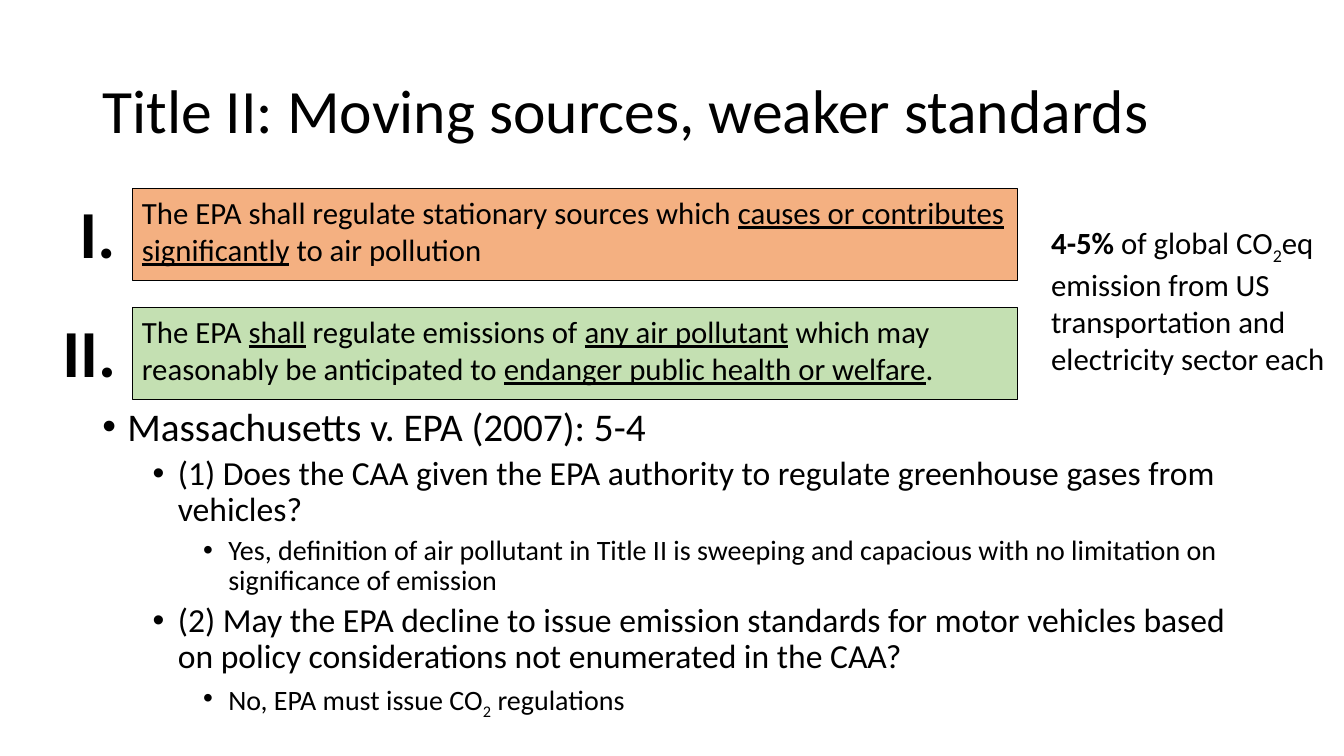
from dataclasses import dataclass

from lxml import etree
from pptx import Presentation
from pptx import util as u
from pptx.dml.color import RGBColor
from pptx.enum import shapes, text
from pptx.oxml import ns

Run = tuple[str, str]  # words and style: "", "u", "b" or "sub"

HUES = {"ink": "000000", "law1": "F4B081", "law2": "C4E0B2"}
STYLES = {
    "": {},
    "u": {"underline": True},
    "b": {"bold": True},
    "sub": {},
}
SIZES = (28, 24, 20)  # bullet text by level


@dataclass
class Box:
    left: float
    top: float
    width: float
    height: float
    runs: list[Run]
    size: float = 22
    fill: str = ""


@dataclass
class Point:
    level: int
    runs: list[Run]


def tint(name: str) -> RGBColor:
    return RGBColor.from_string(HUES[name])


def write(para, runs: list[Run], size: float) -> None:
    """Add styled runs to a paragraph."""
    para.alignment = text.PP_ALIGN.LEFT
    for words, style in runs:
        run = para.add_run()
        run.text = words
        form = {"name": "Calibri", "size": u.Pt(size), **STYLES[style]}
        for key, value in form.items():
            setattr(run.font, key, value)
        run.font.color.rgb = tint("ink")
        if style == "sub":
            run._r.get_or_add_rPr().set("baseline", "-25000")


def frame(shape, anchor=text.MSO_ANCHOR.TOP):
    """Set wrapping, fit and anchor of a shape's text."""
    body = shape.text_frame
    form = {"word_wrap": True, "auto_size": text.MSO_AUTO_SIZE.NONE,
            "vertical_anchor": anchor}
    for key, value in form.items():
        setattr(body, key, value)
    return body


def place(shape, left: float, top: float, width: float, height: float) -> None:
    spots = {"left": left, "top": top, "width": width, "height": height}
    for key, value in spots.items():
        setattr(shape, key, u.Pt(value))


def draw(slide, box: Box) -> None:
    """Draw a filled rectangle, or a plain text box if there is no fill."""
    area = [u.Pt(n) for n in (box.left, box.top, box.width, box.height)]
    if box.fill:
        shape = slide.shapes.add_shape(shapes.MSO_SHAPE.RECTANGLE, *area)
        shape.shadow.inherit = False
        shape.fill.solid()
        shape.fill.fore_color.rgb = tint(box.fill)
        shape.line.color.rgb = tint("ink")
        shape.line.width = u.Pt(0.75)
    else:
        shape = slide.shapes.add_textbox(*area)
    write(frame(shape).paragraphs[0], box.runs, box.size)


def bullet(para, point: Point) -> None:
    """Format and fill one bulleted paragraph."""
    props = para._p.get_or_add_pPr()
    props.set("marL", str(u.Pt(18 + 36 * point.level)))
    props.set("indent", str(u.Pt(-18)))
    hue = etree.SubElement(props, ns.qn("a:buClr"))
    etree.SubElement(hue, ns.qn("a:srgbClr"), val=HUES["ink"])
    etree.SubElement(props, ns.qn("a:buFont"), typeface="Arial")
    etree.SubElement(props, ns.qn("a:buChar"), char="•")
    para.level = point.level
    para.line_spacing = 0.9
    if point.level:
        para.space_before = u.Pt(5)
    write(para, point.runs, SIZES[point.level])


BOXES = [
    # Statute texts
    Box(94.3, 219.6, 632.2, 65.5, [
        ("The EPA ", ""), ("shall", "u"), (" regulate emissions of ", ""),
        ("any air pollutant", "u"),
        (" which may reasonably be anticipated to ", ""),
        ("endanger public health or welfare", "u"), (".", "")], fill="law2"),
    Box(94.3, 134.6, 632.2, 65.5, [
        ("The EPA shall regulate stationary sources which ", ""),
        ("causes or contributes significantly", "u"),
        (" to air pollution", "")], fill="law1"),
    # Numerals
    Box(49.7, 133.2, 42.5, 65.5, [("I.", "b")], 48),
    Box(37.4, 218.2, 56.9, 65.5, [("II.", "b")], 48),
    # Side note
    Box(743.8, 156.2, 216, 113.8, [
        ("4-5%", "b"), (" of global CO", ""), ("2", "sub"),
        ("eq emission from US transportation and electricity sector each",
         "")]),
]

POINTS = [
    Point(0, [("Massachusetts v. EPA (2007): 5-4", "")]),
    Point(1, [("(1) Does the CAA given the EPA authority to regulate "
               "greenhouse gases from vehicles?", "")]),
    Point(2, [("Yes, definition of air pollutant in Title II is sweeping and "
               "capacious with no limitation on significance of emission",
               "")]),
    Point(1, [("(2) May the EPA decline to issue emission standards for motor "
               "vehicles based on policy considerations not enumerated in the "
               "CAA?", "")]),
    Point(2, [("No, EPA must issue CO", ""), ("2", "sub"),
              (" regulations", "")]),
]


def main() -> None:
    deck = Presentation()
    deck.slide_width, deck.slide_height = u.Pt(960), u.Pt(540)
    slide = deck.slides.add_slide(deck.slide_layouts[5])

    # Title
    title = slide.shapes.title
    place(title, 66, 28.8, 828, 104.4)
    head = frame(title, text.MSO_ANCHOR.MIDDLE).paragraphs[0]
    head.line_spacing = 0.9
    write(head, [("Title II: Moving sources, weaker standards", "")], 44)

    # Court case
    case = slide.shapes.add_textbox(*map(u.Pt, (66, 287.3, 828, 277.2)))
    body = frame(case)
    for rank, point in enumerate(POINTS):
        bullet(body.add_paragraph() if rank else body.paragraphs[0], point)

    # Statutes, numerals and side note
    for box in BOXES:
        draw(slide, box)

    deck.save("out.pptx")


if __name__ == "__main__":
    main()
